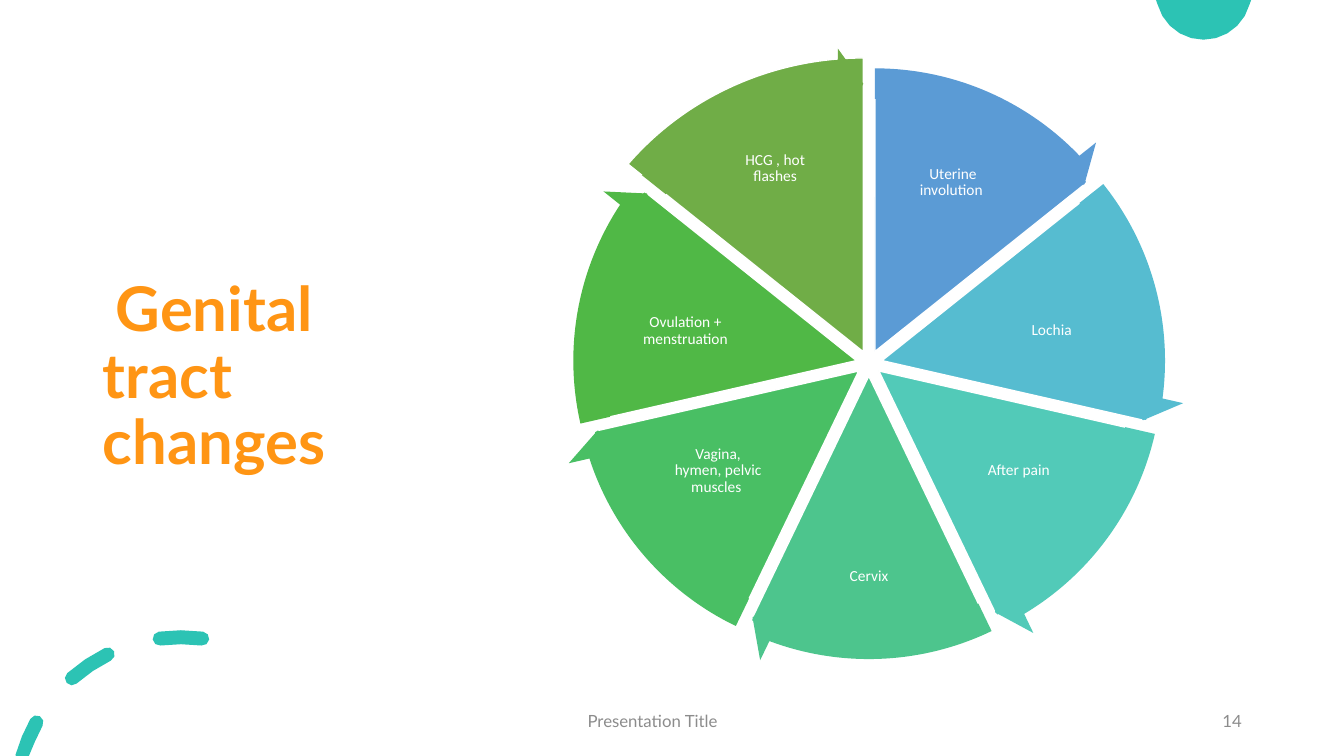
from math import cos, radians, sin

from pptx import Presentation
from pptx.dml.color import RGBColor
from pptx.enum import shapes, text
from pptx.util import Pt

TEAL, GREY, WHITE, ORANGE = "2CC3B4", "8C8C8C", "FFFFFF", "FF9514"


def paint(shape, fill, line=None):
    shape.shadow.inherit = False
    shape.fill.solid()
    shape.fill.fore_color.rgb = RGBColor.from_string(fill)
    if line:
        shape.line.color.rgb = RGBColor.from_string(line)
        shape.line.width = Pt(1)
    else:
        shape.line.fill.background()


def write(shape, words, font, size, color, align, inset=7.2):
    """Fill a shape with one middle-anchored paragraph and return it."""
    tf = shape.text_frame
    tf.text = words
    tf.word_wrap = True
    tf.auto_size = text.MSO_AUTO_SIZE.NONE
    tf.vertical_anchor = text.MSO_ANCHOR.MIDDLE
    tf.margin_left = tf.margin_right = Pt(inset)
    tf.margin_top = tf.margin_bottom = Pt(min(inset, 3.6))
    p = tf.paragraphs[0]
    p.alignment = align
    f = p.runs[0].font
    f.name, f.size = font, Pt(size)
    f.color.rgb = RGBColor.from_string(color)
    return p


prs = Presentation()
prs.slide_width, prs.slide_height = Pt(960), Pt(540)
s = prs.slides.add_slide(prs.slide_layouts[5])
LEFT, CENTER, RIGHT = text.PP_ALIGN.LEFT, text.PP_ALIGN.CENTER, text.PP_ALIGN.RIGHT

# Dot cut by the top edge, and a dashed ring cut by the bottom edge
dot = [(859.7 + 34 * cos(radians(a)), max(0, 34 * sin(radians(a)) - 5.6))
       for a in range(0, 181, 15)]
ring_x, ring_y, ring_r, half = 129.3, 573.2, 118, 5
ring = []
for start, end in [(-7.4, 7.4), (26.3, 41.3), (61, 74)]:
    # Each point: angle left of vertical, turn around the dash's rounded end
    middle = (start + end) / 2
    turns = [(end, t) for t in range(0, 181, 45)] + [(middle, 180)]
    turns += [(start, t) for t in range(180, 361, 45)] + [(middle, 0)]
    dash = []
    for a, t in turns:
        a, t = radians(a), radians(t)
        r, forward = ring_r + half * cos(t), half * sin(t)
        dash.append((ring_x - r * sin(a) - forward * cos(a),
                     min(540, ring_y - r * cos(a) + forward * sin(a))))
    ring.append(dash)
for outlines in ([dot], ring):
    fb = s.shapes.build_freeform()
    for outline in outlines:
        points = [(Pt(x), Pt(y)) for x, y in outline]
        if outline is outlines[0]:
            fb = s.shapes.build_freeform(*points[0])
        else:
            fb.move_to(*points[0])
        fb.add_line_segments(points[1:], close=True)
    paint(fb.convert_to_shape(), TEAL)

# Title and footer
title = s.shapes.title
title.left, title.top, title.width, title.height = Pt(66.2), Pt(51), Pt(232.6), Pt(438.5)
p = write(title, "Genital tract changes", "Lato", 44, ORANGE, LEFT)
p.line_spacing = 0.9
p.runs[0].font.bold = True
p._p.get_or_add_pPr().set("indent", str(Pt(9.3)))

for words, x, w, align in [("Presentation Title", 412.6, 334, LEFT), ("14", 761, 133.2, RIGHT)]:
    box = s.shapes.add_textbox(Pt(x), Pt(500.4), Pt(w), Pt(28.8))
    write(box, words, "Lato", 12, GREY, align)

# Cycle: label, colour, centre of the slice, label box
slices = [
    ("Uterine involution ", "5B9BD5", (625, 251.1), (648, 104.4, 65.5, 51.8)),
    ("Lochia ", "56BCD0", (630, 257.6), (715, 213.5, 74.9, 45.4)),
    ("After pain ", "52CAB8", (627.8, 265), (696.2, 311.2, 65.5, 50.4)),
    ("Cervix", "4DC58D", (620.6, 268.6), (589, 388.8, 63.4, 45.4)),
    ("Vagina, hymen, pelvic muscles ", "49BF64", (613.4, 265), (480.2, 311, 65.5, 50.4)),
    ("Ovulation + menstruation", "50B846", (611.8, 257.6), (452.2, 213.8, 74.9, 45.4)),
    ("HCG , hot flashes", "70AD47", (616.7, 251.3), (517, 92.2, 73.4, 56.2)),
]
TURN, TOP = 216, 162  # full circle and twelve o'clock in adjustment units
step = TURN / len(slices)
cycle = s.shapes.add_group_shape().shapes

for i, (label, color, (cx, cy), frame) in enumerate(slices):
    w, h = (437, 419.8) if i == len(slices) - 1 else (388, 388)
    pie = cycle.add_shape(shapes.MSO_SHAPE.PIE, Pt(cx - w / 2), Pt(cy - h / 2), Pt(w), Pt(h))
    pie.adjustments[0] = (TOP + i * step) % TURN
    pie.adjustments[1] = (TOP + (i + 1) * step) % TURN
    paint(pie, color, WHITE)
    box = cycle.add_textbox(*[Pt(v) for v in frame])
    write(box, label, "Calibri", 11, WHITE, CENTER, inset=1.1).line_spacing = 0.9

size = 434.9
for i, (label, color, (cx, cy), frame) in enumerate(slices):
    arrow = cycle.add_shape(shapes.MSO_SHAPE.CIRCULAR_ARROW,
                            Pt(cx - size / 2), Pt(cy - size / 2), Pt(size), Pt(size))
    start = TOP + i * step
    for n, value in enumerate([0.05, 3.28, (start + 27.58) % TURN, start % TURN, 0.06]):
        arrow.adjustments[n] = value
    paint(arrow, color)

prs.save("out.pptx")
